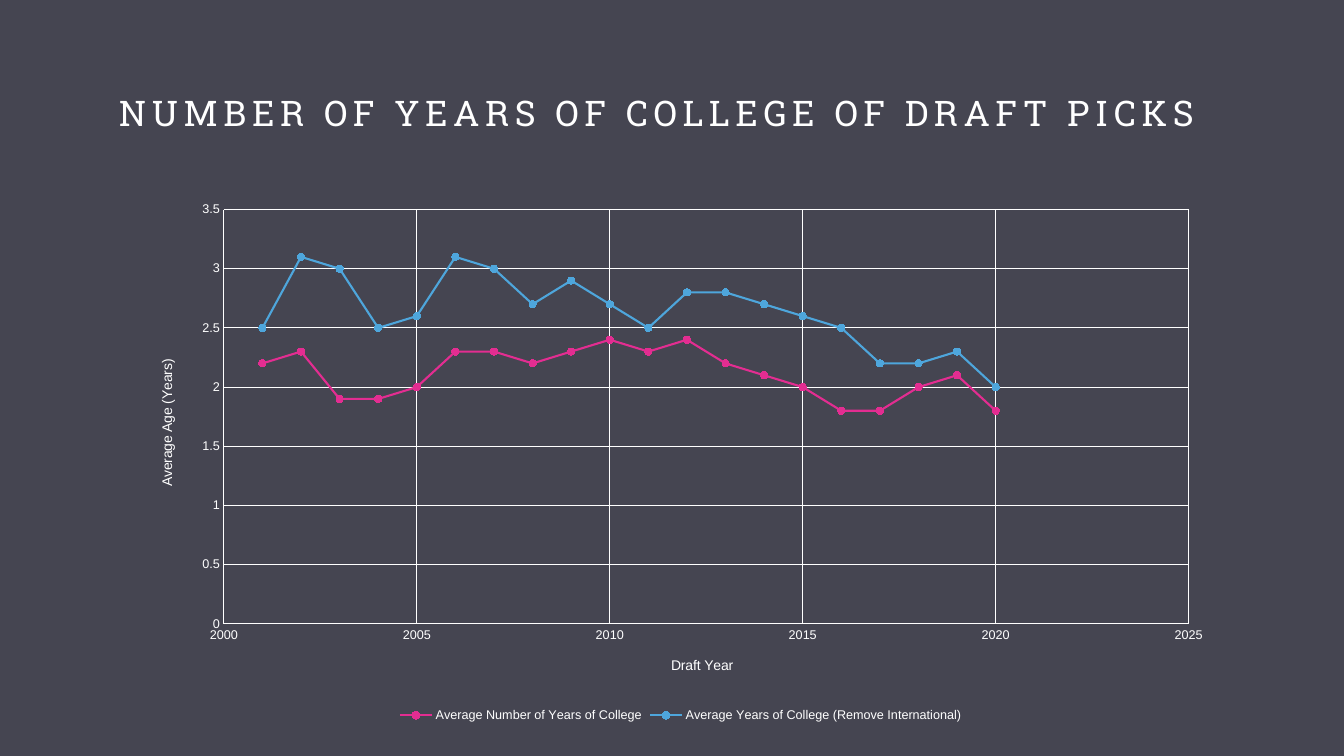
from lxml import etree
from pptx import Presentation
from pptx.chart.data import XyChartData
from pptx.dml.color import RGBColor
from pptx.enum.chart import XL_CHART_TYPE, XL_LEGEND_POSITION, XL_MARKER_STYLE, XL_TICK_MARK
from pptx.enum.text import MSO_ANCHOR, MSO_AUTO_SIZE, PP_ALIGN
from pptx.oxml.ns import qn
from pptx.util import Inches, Pt

COLORS = {
    "background": "454551",
    "white": "FFFFFF",
    "all_picks": "E32D91",
    "without_international": "4EA6DC",
}
CHART_WIDTH, CHART_HEIGHT = 10.8, 5.31
YEARS = range(2001, 2021)
COLLEGE_YEARS = [
    ("Average Number of Years of College", "all_picks",
     [2.2, 2.3, 1.9, 1.9, 2, 2.3, 2.3, 2.2, 2.3, 2.4,
      2.3, 2.4, 2.2, 2.1, 2, 1.8, 1.8, 2, 2.1, 1.8]),
    ("Average Years of College (Remove International)", "without_international",
     [2.5, 3.1, 3, 2.5, 2.6, 3.1, 3, 2.7, 2.9, 2.7,
      2.5, 2.8, 2.8, 2.7, 2.6, 2.5, 2.2, 2.2, 2.3, 2]),
]


def style_font(font, size, name="Arial"):
    font.size = Pt(size)
    font.name = name
    font.bold = False
    font.color.rgb = RGBColor.from_string(COLORS["white"])


def place(element, index, **settings):
    for old_layout in element.findall(qn("c:layout")):
        element.remove(old_layout)
    layout = etree.Element(qn("c:layout"))
    element.insert(index, layout)
    manual = etree.SubElement(layout, qn("c:manualLayout"))
    for tag, value in settings.items():
        etree.SubElement(manual, qn(f"c:{tag}")).set("val", str(value))


prs = Presentation()
prs.slide_width = Inches(13.33)
prs.slide_height = Inches(7.5)
slide = prs.slides.add_slide(prs.slide_layouts[5])
slide.background.fill.solid()
slide.background.fill.fore_color.rgb = RGBColor.from_string(COLORS["background"])

heading = slide.shapes.title
heading.left, heading.top = Inches(1.18), Inches(0.9)
heading.width, heading.height = Inches(10.97), Inches(0.72)
frame = heading.text_frame
frame.text = "NUMBER OF YEARS OF COLLEGE OF DRAFT PICKS"
frame.margin_left = frame.margin_right = frame.margin_top = frame.margin_bottom = 0
frame.auto_size = MSO_AUTO_SIZE.NONE
frame.vertical_anchor = MSO_ANCHOR.TOP
frame.word_wrap = True
frame.paragraphs[0].alignment = PP_ALIGN.LEFT
heading_run = frame.paragraphs[0].runs[0]
style_font(heading_run.font, 25.2, "Roboto Slab")
heading_run.font._element.set("spc", "400")

draft_data = XyChartData()
for name, _, averages in COLLEGE_YEARS:
    points = draft_data.add_series(name)
    for year, average in zip(YEARS, averages):
        points.add_data_point(year, average)

chart = slide.shapes.add_chart(
    XL_CHART_TYPE.XY_SCATTER_LINES,
    Inches(1.35), Inches(1.9), Inches(CHART_WIDTH), Inches(CHART_HEIGHT), draft_data,
).chart
style_font(chart.font, 10)
chart.has_title = False
chart.has_legend = True
chart.legend.position = XL_LEGEND_POSITION.BOTTOM
chart.legend.include_in_layout = False
style_font(chart.legend.font, 9)

plot = chart.plots[0]
plot.vary_by_categories = False
for series, (_, color_name, _) in zip(plot.series, COLLEGE_YEARS):
    color = RGBColor.from_string(COLORS[color_name])
    series.smooth = False
    series.format.line.width = Pt(1.5)
    series.format.line.color.rgb = color
    series.marker.style = XL_MARKER_STYLE.CIRCLE
    series.marker.size = 5
    series.marker.format.fill.solid()
    series.marker.format.fill.fore_color.rgb = color
    series.marker.format.line.color.rgb = color

for axis, label, low, high, step, left, top in [
    (chart.category_axis, "Draft Year", 2000, 2025, 5, 5.28, 4.59),
    (chart.value_axis, "Average Age (Years)", 0, 3.5, 0.5, 0.19, 1.64),
]:
    axis.minimum_scale, axis.maximum_scale, axis.major_unit = low, high, step
    axis.major_tick_mark = axis.minor_tick_mark = XL_TICK_MARK.NONE
    axis.has_major_gridlines = True
    for line in (axis.format.line, axis.major_gridlines.format.line):
        line.width = Pt(0.75)
        line.color.rgb = RGBColor.from_string(COLORS["white"])
    style_font(axis.tick_labels.font, 9)
    axis.tick_labels.number_format = "General"
    axis.tick_labels.number_format_is_linked = False
    label_frame = axis.axis_title.text_frame
    label_frame.text = label
    style_font(label_frame.paragraphs[0].runs[0].font, 10)
    place(axis.axis_title._element, 1, xMode="edge", yMode="edge",
          x=left / CHART_WIDTH, y=top / CHART_HEIGHT)

place(chart._chartSpace.chart.plotArea, 0, layoutTarget="inner",
      xMode="edge", yMode="edge", x=0.87 / CHART_WIDTH, y=0.18 / CHART_HEIGHT,
      w=9.57 / CHART_WIDTH, h=4.11 / CHART_HEIGHT)

prs.save("out.pptx")
